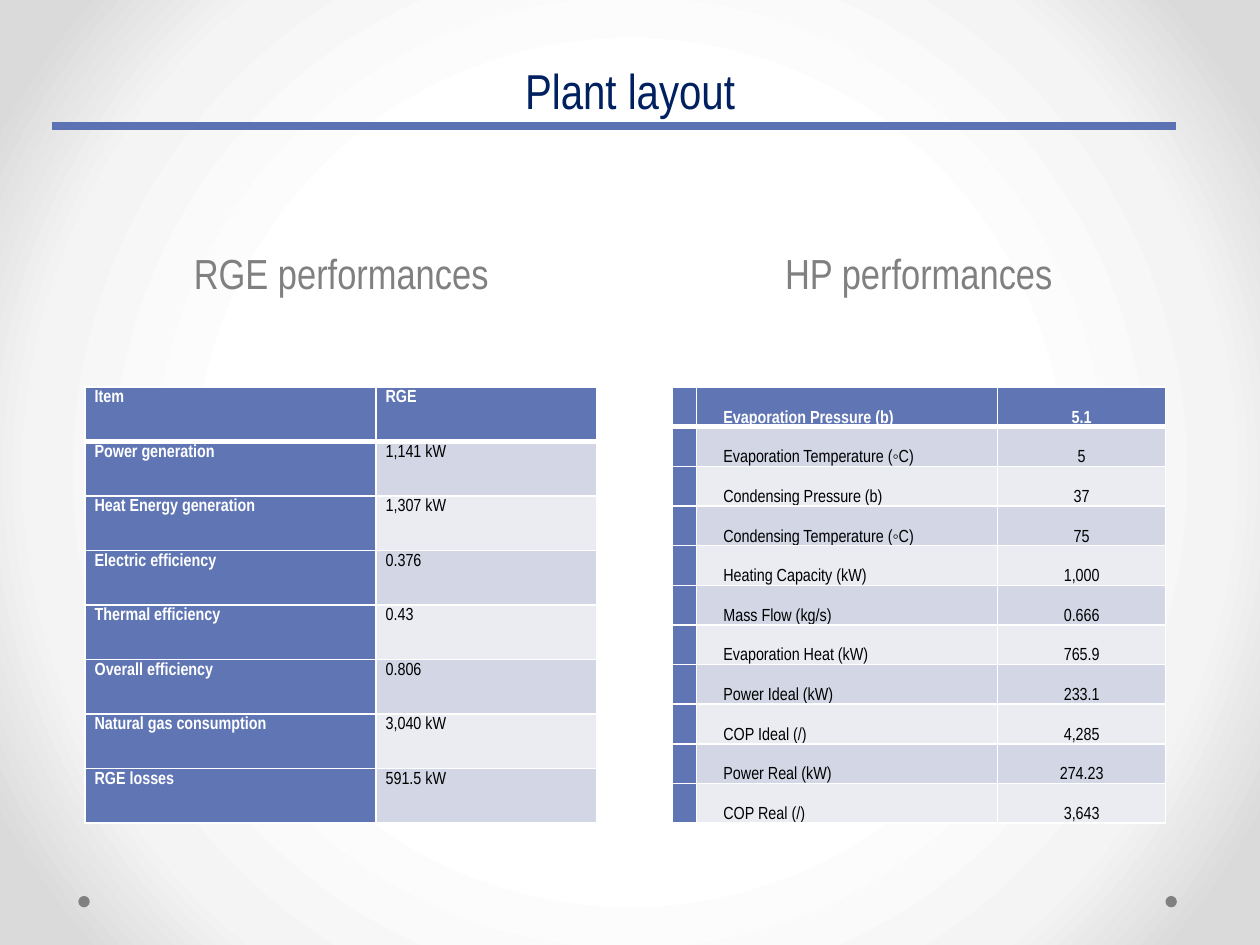
from lxml import etree
from pptx import Presentation
from pptx import util as u
from pptx.dml import color
from pptx.enum import shapes, text
from pptx.oxml import ns

NARROW = "Arial Narrow"
WHITE, BLACK, GREY, NAVY = "FFFFFF", "000000", "808080", "002060"
BLUE, RULE_BLUE = "6076B4", "5C72B2"
BANDS = ["EAECF2", "D2D6E5"]
LEFT, CENTER = text.PP_ALIGN.LEFT, text.PP_ALIGN.CENTER
TOP, BOTTOM = text.MSO_ANCHOR.TOP, text.MSO_ANCHOR.BOTTOM

RGE = [
    ("Item", "RGE"),
    ("Power generation", "1,141 kW"),
    ("Heat Energy generation", "1,307 kW"),
    ("Electric efficiency", "0.376"),
    ("Thermal efficiency", "0.43"),
    ("Overall efficiency", "0.806"),
    ("Natural gas consumption", "3,040 kW"),
    ("RGE losses", "591.5 kW"),
]
HEAT_PUMP = [
    ("", "Evaporation Pressure (b)", "5.1"),
    ("", "Evaporation Temperature (◦C)", "5"),
    ("", "Condensing Pressure (b)", "37"),
    ("", "Condensing Temperature (◦C)", "75"),
    ("", "Heating Capacity (kW)", "1,000"),
    ("", "Mass Flow (kg/s)", "0.666"),
    ("", "Evaporation Heat (kW)", "765.9"),
    ("", "Power Ideal (kW)", "233.1"),
    ("", "COP Ideal (/)", "4,285"),
    ("", "Power Real (kW)", "274.23"),
    ("", "COP Real (/)", "3,643"),
]


def rgb(code):
    """Turn a hex string into a colour."""
    return color.RGBColor.from_string(code)


def child(parent, tag, **attributes):
    """Append a DrawingML element and return it."""
    return etree.SubElement(parent, ns.qn(tag), attributes)


def write(frame, words, size=10, ink=BLACK, bold=False, align=LEFT,
          spacing=None, before=None, after=None, indent=0):
    """Write one formatted paragraph into a text frame."""
    paragraph = frame.paragraphs[0]
    paragraph.alignment = align
    paragraph.line_spacing = spacing
    paragraph.space_before, paragraph.space_after = before, after
    if indent:
        properties = paragraph._p.get_or_add_pPr()
        properties.set("marL", "0")
        properties.set("indent", str(u.Pt(indent)))
    run = paragraph.add_run()
    run.text = words
    run.font.name, run.font.size, run.font.bold = NARROW, u.Pt(size), bold
    run.font.color.rgb = rgb(ink)


def label(slide, box, words, **style):
    """Place a wrapped text box with its words at the bottom."""
    frame = slide.shapes.add_textbox(*map(u.Pt, box)).text_frame
    frame.word_wrap, frame.vertical_anchor = True, BOTTOM
    write(frame, words, **style)


def paint_cell(cell, fill, header):
    """Fill a cell and rule its four sides, heavier below the header."""
    cell.fill.solid()
    cell.fill.fore_color.rgb = rgb(fill)
    properties = cell._tc.get_or_add_tcPr()
    for place, side in enumerate("LRTB"):
        width = 3 if header and side == "B" else 1
        border = child(properties, f"a:ln{side}", w=str(u.Pt(width)))
        child(child(border, "a:solidFill"), "a:srgbClr", val=WHITE)
        properties.insert(place, border)


def performance_table(slide, box, rows, widths, column_styles, anchor, bold_labels=False):
    """Draw a banded table with a blue header row and first column."""
    frame = slide.shapes.add_table(len(rows), len(widths), *map(u.Pt, box))
    table = frame.table
    table.first_row = table.horz_banding = False
    for column, width in zip(table.columns, widths):
        column.width = u.Pt(width)
    for r, values in enumerate(rows):
        table.rows[r].height = u.Pt(box[3] / len(rows))
        for c, value in enumerate(values):
            cell = table.cell(r, c)
            blue = r == 0 or c == 0
            paint_cell(cell, BLUE if blue else BANDS[r % 2], r == 0)
            cell.vertical_anchor = anchor
            cell.margin_left = cell.margin_right = u.Pt(5.4)
            cell.margin_top = cell.margin_bottom = 0
            write(cell.text_frame, value, ink=WHITE if blue else BLACK,
                  bold=r == 0 or (bold_labels and c == 0), **column_styles[c])


def backdrop(slide):
    """Shade the background and add the two corner dots."""
    slide.background.fill.gradient()
    gradient = next(slide._element.iter(ns.qn("a:gradFill")))
    for part in list(gradient):
        gradient.remove(part)
    stops = child(gradient, "a:gsLst")
    for position, code in [(50, WHITE), (76, "F4F4F4"), (92, "DADADA")]:
        child(child(stops, "a:gs", pos=str(position * 1000)), "a:srgbClr", val=code)
    centre = child(gradient, "a:path", path="circle")
    child(centre, "a:fillToRect", **dict.fromkeys("ltrb", "50000"))
    for left in (666, 44.8):
        dot = slide.shapes.add_shape(shapes.MSO_SHAPE.OVAL,
                                     *map(u.Pt, (left, 512, 6.5, 6.5)))
        dot.shadow.inherit = False
        dot.fill.solid()
        dot.fill.fore_color.rgb = rgb(GREY)
        dot.line.fill.background()


def heading(slide, box):
    """Write the slide title."""
    label(slide, box, "Plant layout", size=28, ink=NAVY, align=CENTER, spacing=u.Pt(58))


def title_rule(slide, left, right, y):
    """Draw the rule under the title."""
    rule = slide.shapes.add_connector(shapes.MSO_CONNECTOR.STRAIGHT,
                                      *map(u.Pt, (left, y, right, y)))
    rule.line.color.rgb = rgb(RULE_BLUE)
    rule.line.width = u.Pt(4.5)
    child(rule._element.spPr, "a:effectLst")


def subheading(slide, box, words):
    """Write the heading above a table."""
    label(slide, box, words, size=24, ink=GREY, align=CENTER, before=u.Pt(4.8))


def main():
    """Build and save the slide."""
    deck = Presentation()
    deck.slide_width, deck.slide_height = u.Pt(720), u.Pt(540)
    slide = deck.slides.add_slide(deck.slide_layouts[6])
    backdrop(slide)
    heading(slide, (36, 0, 648, 72))
    subheading(slide, (36, 126, 318, 48), "RGE performances")
    rge_style = dict(spacing=u.Pt(11), before=u.Pt(2), after=u.Pt(2))
    performance_table(slide, (48.7, 221.2, 292.3, 249.2), RGE, (166.3, 126),
                      [rge_style, rge_style], TOP, bold_labels=True)
    subheading(slide, (366, 126, 318, 48), "HP performances")
    pump_styles = [dict(), dict(spacing=1.15, indent=10), dict(spacing=1.15, align=CENTER)]
    performance_table(slide, (384.4, 221.2, 281.3, 249.2), HEAT_PUMP, (13.2, 172.1, 96),
                      pump_styles, BOTTOM)
    title_rule(slide, 30, 672, 72)
    deck.save("out.pptx")


if __name__ == "__main__":
    main()
